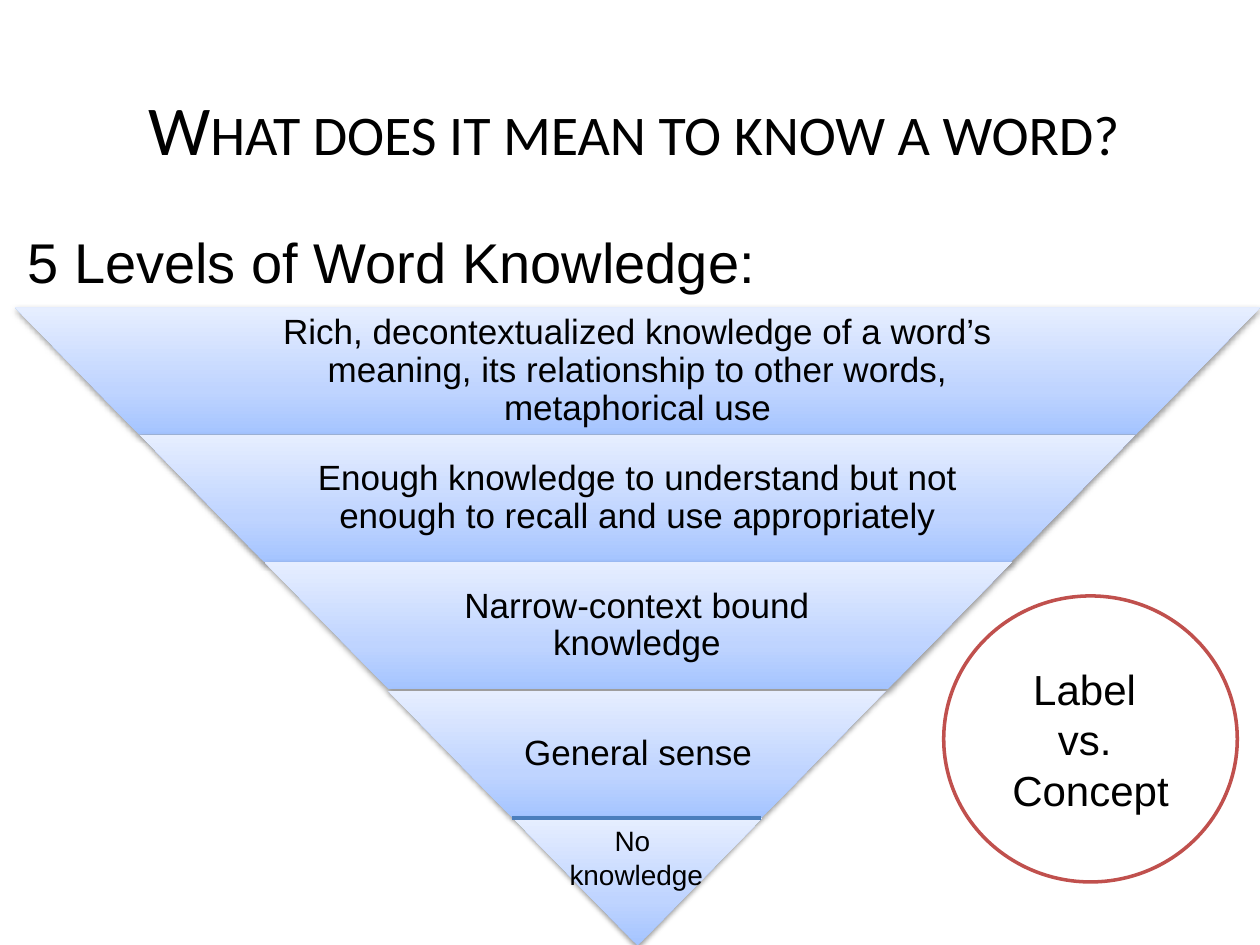
"""Build a slide on the five levels of word knowledge as an inverted pyramid."""
from lxml import etree
from pptx import Presentation, util as u
from pptx.dml.color import RGBColor
from pptx.enum import shapes, text
from pptx.oxml import parse_xml
from pptx.oxml.ns import nsdecls, qn

TITLE = "What does it mean to know a word?"
HEADING = "5 Levels of Word Knowledge:"
LEVELS = [
    "Rich, decontextualized knowledge of a word’s meaning, its relationship to other words, metaphorical use",
    "Enough knowledge to understand but not enough to recall and use appropriately",
    "Narrow-context bound knowledge",
    "General sense",
]
LOWEST = ["No ", "knowledge"]
CONTRAST = ["Label ", "vs. ", "Concept"]
STOPS = [(0, "A4C4FF"), (35, "BFD4FF"), (100, "E6EEFF")]
BLACK, WHITE, RED, BLUE = "000000", "FFFFFF", "C0504D", "4B7EBC"

WIDTH, HEIGHT = 10, 7.5
LEFT, TOP, BANDS = 0.12, 2.44, 5
SPAN = WIDTH - LEFT
CENTER = LEFT + SPAN / 2
ROW = (HEIGHT - TOP) / BANDS
TEXT_SHARE = 0.65
CENTERED, MIDDLE = text.PP_ALIGN.CENTER, text.MSO_ANCHOR.MIDDLE


def rgb(code):
    """Turn a hex string into a colour."""
    return RGBColor.from_string(code)


def box(left, top, width, height):
    """Turn inches into a position and size."""
    return [u.Inches(round(side, 2)) for side in (left, top, width, height)]


def write(frame, lines, size, align=None, anchor=None, font="Arial", spacing=None):
    """Write one paragraph per line and return the runs."""
    frame.word_wrap = True
    if anchor is not None:
        frame.vertical_anchor = anchor
    runs = []
    for number, line in enumerate(lines):
        paragraph = frame.add_paragraph() if number else frame.paragraphs[0]
        paragraph.alignment, paragraph.line_spacing = align, spacing
        run = paragraph.add_run()
        run.text = line
        run.font.size, run.font.name = u.Pt(size), font
        run.font.color.rgb = rgb(BLACK)
        runs.append(run)
    return runs


def shade(band):
    """Give a band its gradient and soft shadow."""
    stops = "".join(
        f'<a:gs pos="{place * 1000}"><a:srgbClr val="{code}"/></a:gs>' for place, code in STOPS)
    gradient = parse_xml(
        f'<a:gradFill {nsdecls("a")} rotWithShape="0"><a:gsLst>{stops}</a:gsLst>'
        '<a:lin ang="16200000" scaled="0"/></a:gradFill>')
    shadow = parse_xml(
        f'<a:effectLst {nsdecls("a")}><a:outerShdw blurRad="40000" dist="20000" dir="5400000" '
        f'rotWithShape="0"><a:srgbClr val="{BLACK}"><a:alpha val="38000"/></a:srgbClr>'
        '</a:outerShdw></a:effectLst>')
    band.line.fill.background()
    properties = band._element.spPr
    properties.find(qn("a:ln")).addprevious(gradient)
    properties.append(shadow)


def add_pyramid(slide):
    """Stack the bands, each narrower by one equal step."""
    pyramid = slide.shapes.add_group_shape().shapes
    for level in range(BANDS):
        width, top = SPAN * (BANDS - level) / BANDS, TOP + level * ROW
        band = pyramid.add_shape(
            shapes.MSO_SHAPE.TRAPEZOID, *box(CENTER - width / 2, top, width, ROW))
        band.rotation = 180
        band.adjustments[0] = 0.976
        shade(band)
        if level < len(LEVELS):
            room = width * TEXT_SHARE
            frame = pyramid.add_textbox(*box(CENTER - room / 2, top, room, ROW)).text_frame
            frame.margin_left = frame.margin_right = u.Inches(0.03)
            frame.margin_top = frame.margin_bottom = u.Inches(0.03)
            write(frame, [LEVELS[level]], 20, CENTERED, MIDDLE, spacing=0.9)


def main():
    """Assemble and save the slide."""
    deck = Presentation()
    deck.slide_width, deck.slide_height = u.Inches(WIDTH), u.Inches(HEIGHT)
    slide = deck.slides.add_slide(deck.slide_layouts[5])
    add_pyramid(slide)

    title = slide.shapes.title
    title.left, title.top, title.width, title.height = box(0.73, 0.56, 8.6, 0.91)
    for run in write(title.text_frame, [TITLE], 40, CENTERED, MIDDLE, "Calibri"):
        run.font._element.set("cap", "small")
    slide.shapes._spTree.append(title._element)

    contrast = slide.shapes.add_shape(shapes.MSO_SHAPE.OVAL, *box(7.49, 4.73, 2.33, 2.27))
    contrast.shadow.inherit = False
    contrast.fill.solid()
    contrast.fill.fore_color.rgb = rgb(WHITE)
    contrast.line.color.rgb, contrast.line.width = rgb(RED), u.Pt(2)
    write(contrast.text_frame, CONTRAST, 24, CENTERED, MIDDLE)

    heading = slide.shapes.add_textbox(*box(LEFT, 1.76, 7.37, 1.18))
    write(heading.text_frame, [HEADING], 32)

    tip_top, tip_width = HEIGHT - ROW, SPAN / BANDS
    tip_left = CENTER - tip_width / 2 - 0.01
    lowest = slide.shapes.add_textbox(*box(tip_left, tip_top, tip_width, 0.94))
    write(lowest.text_frame, LOWEST, 16, CENTERED)

    left, top, width, _ = box(tip_left, tip_top, tip_width, 0)
    divider = slide.shapes.add_connector(
        shapes.MSO_CONNECTOR.STRAIGHT, left, top, left + width, top)
    divider.line.color.rgb, divider.line.width = rgb(BLUE), u.Pt(2.25)
    etree.SubElement(divider._element.spPr, qn("a:effectLst"))

    deck.save("out.pptx")


if __name__ == "__main__":
    main()
